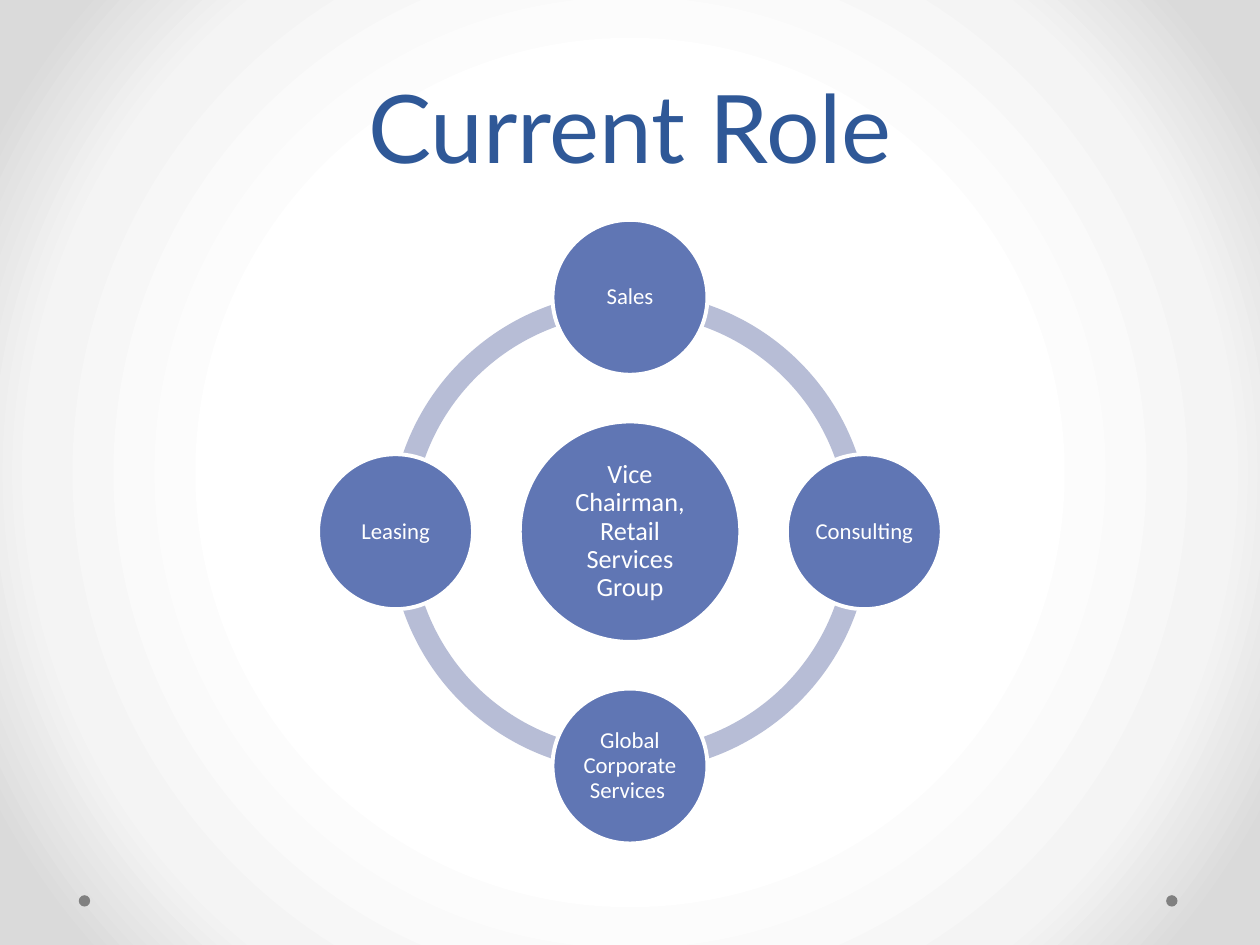
from math import cos, radians, sin

from pptx import Presentation
from pptx.dml.color import RGBColor
from pptx.enum.shapes import MSO_SHAPE
from pptx.enum.text import MSO_ANCHOR, PP_ALIGN
from pptx.oxml import parse_xml
from pptx.util import Inches, Pt

TITLE = "Current Role"
ROLE = "Vice Chairman, Retail Services Group"
# Services by their angle on the ring, clockwise from the right
SERVICES = [
    ("Sales", 270),
    ("Consulting", 0),
    ("Global Corporate Services ", 90),
    ("Leasing", 180),
]
BACKGROUND_STOPS = [(50, "FFFFFF"), (76, "F4F4F4"), (92, "DADADA")]

BLUE, PALE_BLUE, TITLE_BLUE = "6076B4", "B7BDD6", "2F5897"
WHITE, GRAY = "FFFFFF", "808080"

CENTER_X, CENTER_Y = 5, 4.22
ORBIT = 1.86
RING_SIZE, RING_THICKNESS = 3.81, 0.046
ROLE_SIZE, SERVICE_SIZE, DOT_SIZE = 1.75, 1.23, 0.09
DOT_CENTERS = [(0.67, 7.15), (9.3, 7.15)]


def color(hex_value):
    return RGBColor.from_string(hex_value)


def set_background(page):
    """Fill the page with a gradient that spreads from its center."""
    stops = "".join(
        f'<a:gs pos="{percent * 1000}"><a:srgbClr val="{shade}"/></a:gs>'
        for percent, shade in BACKGROUND_STOPS
    )
    background = parse_xml(
        '<p:bg xmlns:p="http://schemas.openxmlformats.org/presentationml/2006/main"'
        ' xmlns:a="http://schemas.openxmlformats.org/drawingml/2006/main">'
        f'<p:bgPr><a:gradFill rotWithShape="1"><a:gsLst>{stops}</a:gsLst>'
        '<a:path path="circle"><a:fillToRect l="50000" t="50000" r="50000" b="50000"/>'
        "</a:path></a:gradFill><a:effectLst/></p:bgPr></p:bg>"
    )
    page._element.cSld.insert(0, background)


def add_centered_shape(page, kind, x, y, size, fill):
    shape = page.shapes.add_shape(
        kind, Inches(x - size / 2), Inches(y - size / 2), Inches(size), Inches(size)
    )
    shape.shadow.inherit = False
    shape.fill.solid()
    shape.fill.fore_color.rgb = color(fill)
    shape.line.fill.background()
    return shape


def write(shape, text, font, size, shade, spacing, anchor, inset):
    frame = shape.text_frame
    frame_format = {"word_wrap": True, "vertical_anchor": anchor}
    for side in ("left", "top", "right", "bottom"):
        frame_format[f"margin_{side}"] = Inches(inset)
    for name, value in frame_format.items():
        setattr(frame, name, value)
    para = frame.paragraphs[0]
    para.alignment = PP_ALIGN.CENTER
    para.line_spacing = spacing
    span = para.add_run()
    span.text = text
    span.font.name = font
    span.font.size = Pt(size)
    span.font.color.rgb = color(shade)


def add_circle(page, text, x, y, size, text_size):
    circle = add_centered_shape(page, MSO_SHAPE.OVAL, x, y, size, BLUE)
    circle.line.color.rgb = color(WHITE)
    circle.line.width = Pt(2.25)
    write(circle, text, "Calibri", text_size, WHITE, 0.9, MSO_ANCHOR.MIDDLE, 0.02)


def add_ring_quarter(page, start):
    arc = add_centered_shape(
        page, MSO_SHAPE.BLOCK_ARC, CENTER_X, CENTER_Y, RING_SIZE, PALE_BLUE
    )
    # Angles are stored in 60000ths of a degree, adjustments in 100000ths
    for index, angle in enumerate((start, (start + 90) % 360)):
        arc.adjustments[index] = angle * 0.6
    arc.adjustments[2] = RING_THICKNESS


def main():
    deck = Presentation()
    deck.slide_width, deck.slide_height = Inches(10), Inches(7.5)
    page = deck.slides.add_slide(deck.slide_layouts[6])
    set_background(page)

    for x, y in DOT_CENTERS:
        add_centered_shape(page, MSO_SHAPE.OVAL, x, y, DOT_SIZE, GRAY)

    for _, angle in SERVICES:
        add_ring_quarter(page, angle)
    add_circle(page, ROLE, CENTER_X, CENTER_Y, ROLE_SIZE, 15)
    for service, angle in SERVICES:
        x = CENTER_X + ORBIT * cos(radians(angle))
        y = CENTER_Y + ORBIT * sin(radians(angle))
        add_circle(page, service, x, y, SERVICE_SIZE, 13)

    box = page.shapes.add_textbox(Inches(0.5), Inches(0.17), Inches(9), Inches(1.33))
    write(box, TITLE, "Lato", 54, TITLE_BLUE, Pt(58), MSO_ANCHOR.BOTTOM, 0.05)

    deck.save("out.pptx")


if __name__ == "__main__":
    main()
